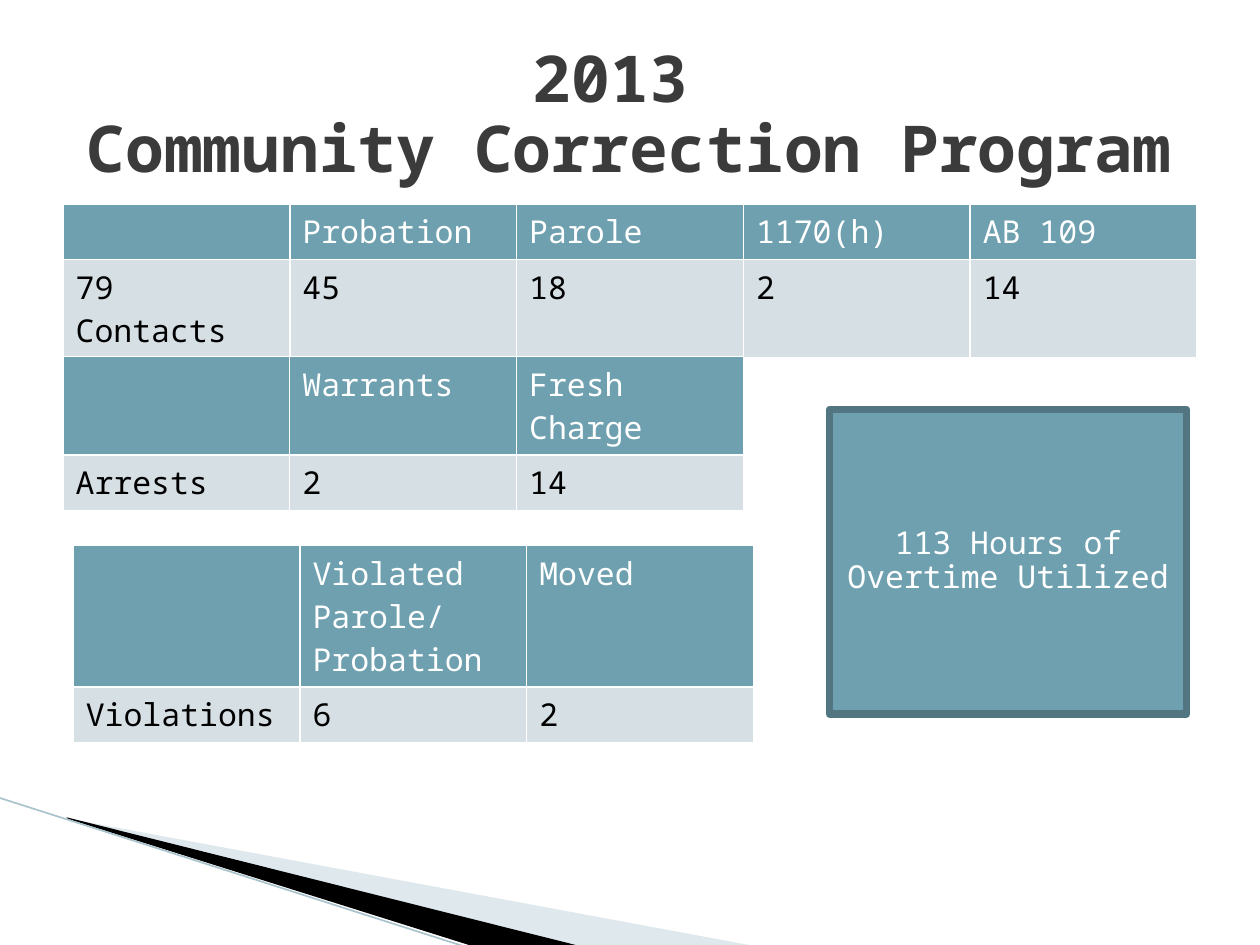
from pptx import Presentation
from pptx.dml.color import RGBColor as RGB
from pptx.enum.shapes import MSO_CONNECTOR as Conn, MSO_SHAPE as Kind
from pptx.enum.text import MSO_ANCHOR as Anchor, MSO_AUTO_SIZE as Fit, PP_ALIGN as Align
from pptx.oxml import parse_xml
from pptx.oxml.ns import nsdecls
from pptx.util import Pt

TEAL = RGB(0x6E, 0xA0, 0xB0)
EDGE = RGB(0x51, 0x76, 0x82)
PALE = RGB(0xD5, 0xDF, 0xE4)
MIST = RGB(0xB1, 0xC9, 0xD2)
HAZE = RGB(0xAA, 0xC4, 0xCE)
GRAY = RGB(0x3B, 0x3B, 0x3B)
BLACK = RGB(0, 0, 0)
WHITE = RGB(0xFF, 0xFF, 0xFF)


class Deck:
    font = "Noto Sans Mono"
    size = 18
    col = 129.6

    def __init__(self):
        self.prs = Presentation()
        self.prs.slide_width, self.prs.slide_height = Pt(720), Pt(540)
        self.slide = self.prs.slides.add_slide(self.prs.slide_layouts[5])
        self.shapes = self.slide.shapes

    def style(self, frame, color, size=size, bold=False):
        for para in frame.paragraphs:
            for run in para.runs:
                font = run.font
                font.name, font.size, font.bold = self.font, Pt(size), bold
                font.color.rgb = color

    def center(self, frame):
        frame.word_wrap = True
        frame.auto_size = Fit.NONE
        frame.vertical_anchor = Anchor.MIDDLE
        for para in frame.paragraphs:
            para.alignment = Align.CENTER
            para.line_spacing = 0.9

    def title(self, text, x, y, w, h):
        box = self.shapes.title
        box.left, box.top, box.width, box.height = Pt(x), Pt(y), Pt(w), Pt(h)
        box.text_frame.text = text
        self.center(box.text_frame)
        self.style(box.text_frame, GRAY, 36.9, True)

    def wedge(self, points, color, alpha=None):
        form = self.shapes.build_freeform(*points[0], scale=Pt(1))
        form.add_line_segments(points[1:], close=True)
        shape = form.convert_to_shape()
        shape.shadow.inherit = False
        shape.fill.solid()
        shape.fill.fore_color.rgb = color
        shape.line.fill.background()
        if alpha:
            tint = shape.fill._xPr.find(".//{*}srgbClr")
            tint.append(parse_xml(f'<a:alpha {nsdecls("a")} val="{alpha * 1000}"/>'))

    def line(self, x1, y1, x2, y2, color, width):
        rule = self.shapes.add_connector(Conn.STRAIGHT, Pt(x1), Pt(y1), Pt(x2), Pt(y2))
        rule.line.color.rgb, rule.line.width = color, Pt(width)
        rule._element.spPr.append(parse_xml(f'<a:effectLst {nsdecls("a")}/>'))

    def border(self, cell):
        props = cell._tc.get_or_add_tcPr()
        for i, side in enumerate(("lnL", "lnR", "lnT", "lnB")):
            props.insert(i, parse_xml(
                f'<a:{side} {nsdecls("a")} w="{Pt(1)}"><a:solidFill>'
                f'<a:srgbClr val="{WHITE}"/></a:solidFill></a:{side}>'))

    def table(self, x, y, heights, rows):
        count = len(rows[0])
        grid = self.shapes.add_table(len(rows), count, Pt(x), Pt(y),
                                     Pt(self.col * count), Pt(sum(heights))).table
        for r, (high, row) in enumerate(zip(heights, rows)):
            grid.rows[r].height = Pt(high)
            fill, ink = (PALE, BLACK) if r else (TEAL, WHITE)
            for c, text in enumerate(row):
                cell = grid.cell(r, c)
                cell.text_frame.text = text
                self.style(cell.text_frame, ink)
                cell.fill.solid()
                cell.fill.fore_color.rgb = fill
                self.border(cell)

    def panel(self, text, x, y, w, h):
        box = self.shapes.add_shape(Kind.RECTANGLE, Pt(x), Pt(y), Pt(w), Pt(h))
        box.shadow.inherit = False
        box.fill.solid()
        box.fill.fore_color.rgb = TEAL
        box.line.color.rgb, box.line.width = EDGE, Pt(4.33)
        box.text_frame.text = text
        self.center(box.text_frame)
        self.style(box.text_frame, WHITE)


def main():
    deck = Deck()

    # Corner wedges
    deck.wedge([(39.6, 468.5), (428.4, 540), (328.3, 540), (39.6, 468)], MIST, 40)
    deck.wedge([(38.2, 467.3), (329, 540), (267.8, 540), (38.9, 468)], BLACK)
    deck.line(-0.7, 455.8, 267.1, 541.4, HAZE, 0.95)

    # Title
    deck.title("2013 \vCommunity Correction Program", 36, 21.6, 648, 90)

    # Contacts, arrests and violations
    deck.table(36, 116.6, (31.5, 55.5), [
        ("", "Probation", "Parole", "1170(h)", "AB 109"),
        ("79 Contacts", "45", "18", "2", "14")])
    deck.table(36, 203.8, (56, 31.5), [
        ("", "Warrants", "Fresh Charge"),
        ("Arrests", "2", "14")])
    deck.table(41.8, 311.8, (80, 31.5), [
        ("", "Violated Parole/ Probation", "Moved"),
        ("Violations", "6", "2")])

    # Overtime
    deck.panel("113 Hours of Overtime Utilized", 474, 234, 204, 174)

    deck.prs.save("out.pptx")


if __name__ == "__main__":
    main()
